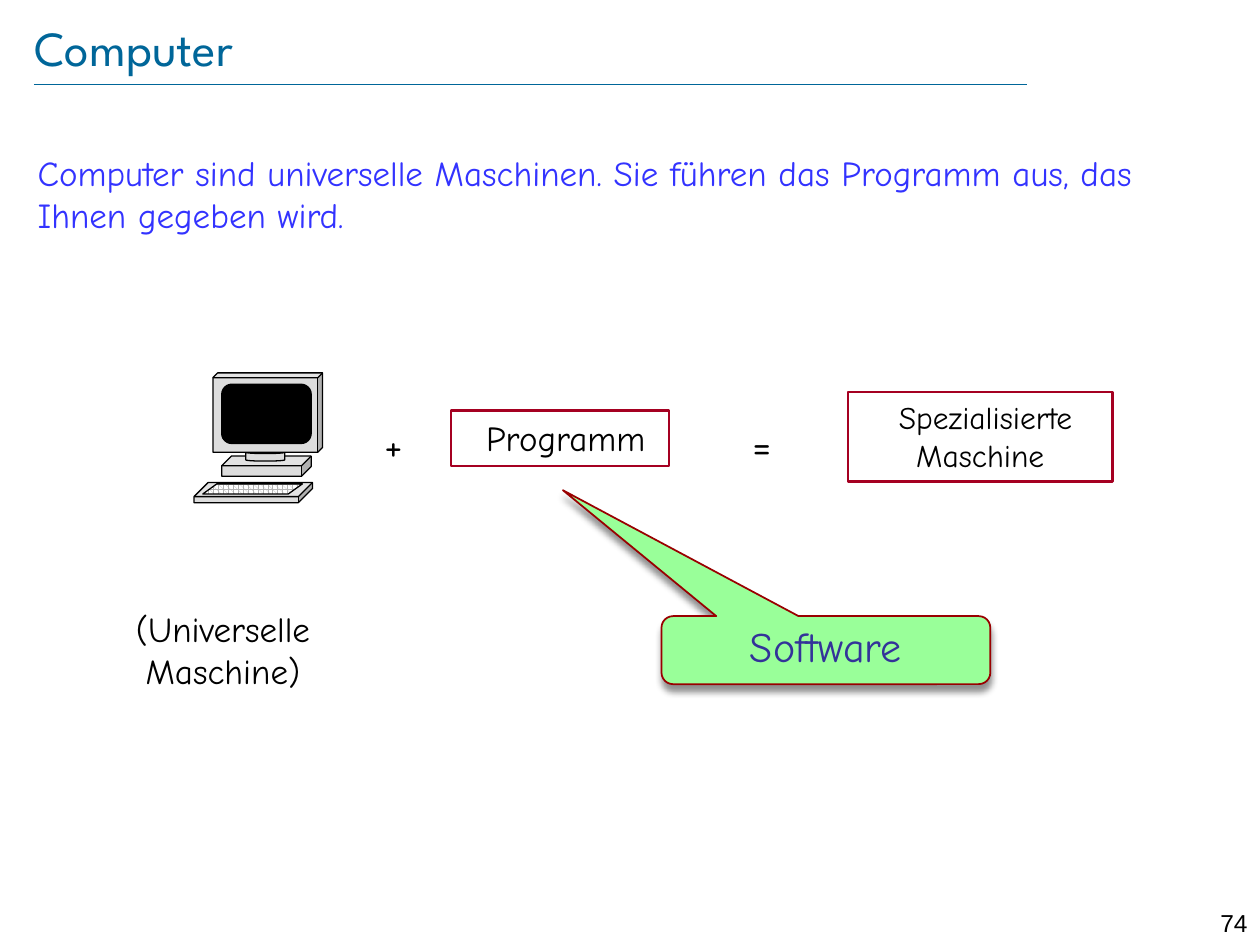
from dataclasses import dataclass

from lxml import etree
from pptx import Presentation, util as u
from pptx.dml.color import RGBColor
from pptx.enum import dml, shapes, text
from pptx.oxml.ns import qn

FONT = "Comic Neue"
BLACK, GREY, CRIMSON, TEAL = "000000", "DDDDDD", "A50021", "006699"
SHAPE = shapes.MSO_SHAPE
ALIGN = text.PP_ALIGN


@dataclass
class Part:
    """One piece of the computer drawing."""
    kind: int
    at: tuple
    adjust: float
    fill: str = GREY


@dataclass
class Label:
    """A piece of text, optionally inside an outlined box."""
    words: str
    at: tuple
    size: float = 20
    color: str = BLACK
    font: str = FONT
    align: int = ALIGN.CENTER
    outline: str = ""
    anchor: int = text.MSO_ANCHOR.TOP
    insets: tuple = (0.1, 0.05)


def rgb(value: str) -> RGBColor:
    return RGBColor.from_string(value)


def inches(at: tuple) -> list:
    return [u.Inches(value) for value in at]


def write(box, label: Label) -> None:
    frame = box.text_frame
    frame.word_wrap = True
    frame.vertical_anchor = label.anchor
    frame.margin_left = frame.margin_right = u.Inches(label.insets[0])
    frame.margin_top = frame.margin_bottom = u.Inches(label.insets[1])
    frame.text = label.words
    para = frame.paragraphs[0]
    para.alignment = label.align
    for span in para.runs:
        span.font.name = label.font
        span.font.size = u.Pt(label.size)
        span.font.color.rgb = rgb(label.color)


def add_outlined(owner, kind: int, at: tuple, line: str, width: float, fill: str = ""):
    shape = owner.shapes.add_shape(kind, *inches(at))
    shape.shadow.inherit = False
    shape.line.color.rgb = rgb(line)
    shape.line.width = u.Pt(width)
    if fill:
        shape.fill.solid()
        shape.fill.fore_color.rgb = rgb(fill)
    else:
        shape.fill.background()
    return shape


def add_label(page, label: Label) -> None:
    if label.outline:
        box = add_outlined(page, SHAPE.RECTANGLE, label.at, label.outline, 1.5)
    else:
        box = page.shapes.add_textbox(*inches(label.at))
    write(box, label)


def add_part(group, part: Part):
    shape = add_outlined(group, part.kind, part.at, BLACK, 0.75, part.fill)
    shape.adjustments[0] = part.adjust
    return shape


def add_rule(page) -> None:
    rule = page.shapes.add_connector(shapes.MSO_CONNECTOR.STRAIGHT,
                                     *inches((0.27, 0.67, 8.15, 0.67)))
    rule.line.color.rgb = rgb(TEAL)
    rule.line.width = u.Pt(0.25)
    etree.SubElement(rule._element.spPr, qn("a:effectLst"))


def add_drop_shadow(shape) -> None:
    effects = shape._element.spPr.find(qn("a:effectLst"))
    shadow = etree.SubElement(effects, qn("a:outerShdw"), blurRad=str(u.Pt(4)),
                              dist=str(u.Pt(4)), dir="5400000", rotWithShape="0")
    color = etree.SubElement(shadow, qn("a:srgbClr"), val=BLACK)
    etree.SubElement(color, qn("a:alpha"), val="43000")


COMPUTER = [
    Part(SHAPE.CUBE, (1.76, 3.62, 0.71, 0.16), 0.48),
    Part(SHAPE.CAN, (1.95, 3.58, 0.31, 0.08), 0.25),
    Part(SHAPE.CUBE, (1.69, 2.96, 0.87, 0.63), 0.06),
    Part(SHAPE.ROUNDED_RECTANGLE, (1.76, 3.05, 0.71, 0.47), 0.17, BLACK),
    Part(SHAPE.CUBE, (1.54, 3.83, 0.94, 0.16), 0.7),
]
KEYS = Part(SHAPE.PARALLELOGRAM, (1.61, 3.84, 0.79, 0.08), 1.39)

HEADINGS = [
    Label("74", (9.45, 7.16, 0.55, 0.24), 14, font="Arial", align=ALIGN.RIGHT),
    Label("Computer", (0.27, 0.13, 8.69, 0.48), 28, TEAL, "League Spartan",
          ALIGN.LEFT, anchor=text.MSO_ANCHOR.MIDDLE, insets=(0, 0)),
    Label("Computer sind universelle Maschinen. Sie führen das Programm aus, "
          "das Ihnen gegeben wird.", (0.2, 1.15, 9, 4.95), color="3333FF",
          align=ALIGN.LEFT),
]
EQUATION = [
    Label(" Programm", (3.58, 3.26, 1.73, 0.44), outline=CRIMSON),
    Label("(Universelle Maschine)", (0.43, 4.77, 2.68, 0.77)),
    Label("+", (2.95, 3.27, 0.31, 0.4), 24),
    Label("=", (5.87, 3.27, 0.31, 0.4), 24),
    Label(" Spezialisierte Maschine", (6.73, 3.11, 2.1, 0.71), 18, outline=CRIMSON),
]
SOFTWARE = Label("Software", (5.25, 4.89, 2.61, 0.54), 24, "333399",
                 anchor=text.MSO_ANCHOR.MIDDLE, insets=(0, 0.05))


def main() -> None:
    deck = Presentation()
    deck.slide_width, deck.slide_height = u.Inches(10), u.Inches(7.5)
    page = deck.slides.add_slide(deck.slide_layouts[6])

    # Title, rule, page number and statement
    add_rule(page)
    for label in HEADINGS:
        add_label(page, label)

    # Computer drawing
    computer = page.shapes.add_group_shape()
    for part in COMPUTER:
        add_part(computer, part)
    keys = add_part(computer, KEYS)
    keys.fill.patterned()
    keys.fill.pattern = dml.MSO_PATTERN.SPHERE
    keys.fill.fore_color.rgb = rgb("B2B2B2")
    keys.fill.back_color.rgb = rgb("FFFFFF")

    # Machine + program = specialised machine
    for label in EQUATION:
        add_label(page, label)

    # Software callout pointing at the program
    callout = add_outlined(page, SHAPE.ROUNDED_RECTANGULAR_CALLOUT, SOFTWARE.at,
                           "990000", 1, "99FF99")
    for index, value in enumerate((-0.8, -2.35, 0.17)):
        callout.adjustments[index] = value
    add_drop_shadow(callout)
    write(callout, SOFTWARE)
    callout.text_frame.paragraphs[0].line_spacing = 0.8

    deck.save("out.pptx")


if __name__ == "__main__":
    main()
